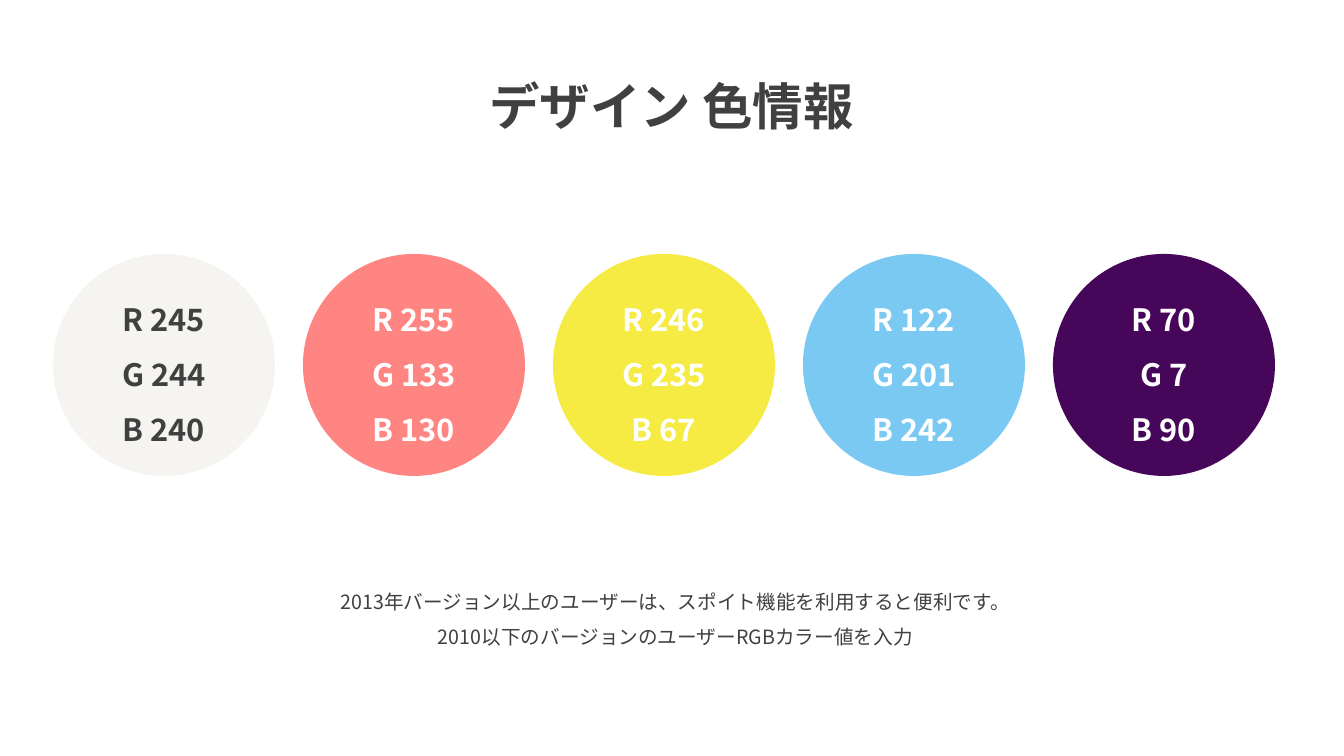
from pptx import Presentation
from pptx.dml.color import RGBColor
from pptx.enum.shapes import MSO_SHAPE as Shape
from pptx.enum.text import MSO_ANCHOR as Anchor, MSO_AUTO_SIZE as AutoSize, PP_ALIGN as Align
from pptx.oxml.ns import qn
from pptx.util import Emu, Pt
from lxml.etree import SubElement

EMU_PER_PX = 914400 / 100.8
FONT = "Noto Sans CJK KR"

DARK = RGBColor(64, 64, 64)
WHITE = RGBColor(255, 255, 255)
IVORY = RGBColor(245, 244, 240)
CORAL = RGBColor(255, 133, 130)
YELLOW = RGBColor(246, 235, 67)
SKY = RGBColor(122, 201, 242)
PURPLE = RGBColor(70, 7, 90)


def px(length):
    return Emu(round(length * EMU_PER_PX))


class SlideBuilder:
    """Holds the text style and the current slide."""

    def __init__(self, slide):
        self.slide = slide
        self.font = FONT
        self.line_spacing = 1.5

    def add_lines(self, frame, lines, size, color, bold=False, anchor=Anchor.TOP):
        frame.word_wrap = True
        frame.auto_size = AutoSize.NONE
        frame.vertical_anchor = anchor
        for index, line in enumerate(lines):
            paragraph = frame.add_paragraph() if index else frame.paragraphs[0]
            paragraph.alignment = Align.CENTER
            paragraph.line_spacing = self.line_spacing
            run = paragraph.add_run()
            run.text = line
            run.font.name = self.font
            run.font.size = Pt(size)
            run.font.bold = bold
            run.font.color.rgb = color
            # East Asian typeface for the Japanese characters
            east_asian = SubElement(run._r.get_or_add_rPr(), qn("a:ea"))
            east_asian.set("typeface", self.font)

    def title(self, text, left, top, width, height):
        heading = self.slide.shapes.title
        heading.left, heading.top = px(left), px(top)
        heading.width, heading.height = px(width), px(height)
        self.add_lines(heading.text_frame, [text], 36, DARK, bold=True)

    def swatch(self, left, top, diameter, color, text_color):
        circle = self.slide.shapes.add_shape(
            Shape.OVAL, px(left), px(top), px(diameter), px(diameter))
        circle.shadow.inherit = False
        circle.fill.solid()
        circle.fill.fore_color.rgb = color
        circle.line.fill.background()
        values = [f"{channel} {value}" for channel, value in zip("RGB", color)]
        self.add_lines(circle.text_frame, values, 22, text_color, bold=True, anchor=Anchor.MIDDLE)

    def caption(self, lines, left, top, width, height):
        box = self.slide.shapes.add_textbox(px(left), px(top), px(width), px(height))
        self.add_lines(box.text_frame, lines, 14, DARK)


def main():
    deck = Presentation()
    deck.slide_width, deck.slide_height = px(1344), px(756)
    title_only = deck.slide_layouts[5]
    builder = SlideBuilder(deck.slides.add_slide(title_only))

    # Heading
    builder.title("デザイン 色情報", 427, 40, 489, 92)

    # Row of colour swatches
    for column, color in enumerate([IVORY, CORAL, YELLOW, SKY, PURPLE]):
        text_color = DARK if color == IVORY else WHITE
        builder.swatch(53 + 250 * column, 254, 222, color, text_color)

    # Usage hint
    builder.caption([
        "2013年バージョン以上のユーザーは、スポイト機能を利用すると便利です。",
        "2010以下のバージョンのユーザーRGBカラー値を入力",
    ], 254, 573, 843, 78)

    deck.save("out.pptx")


if __name__ == "__main__":
    main()
